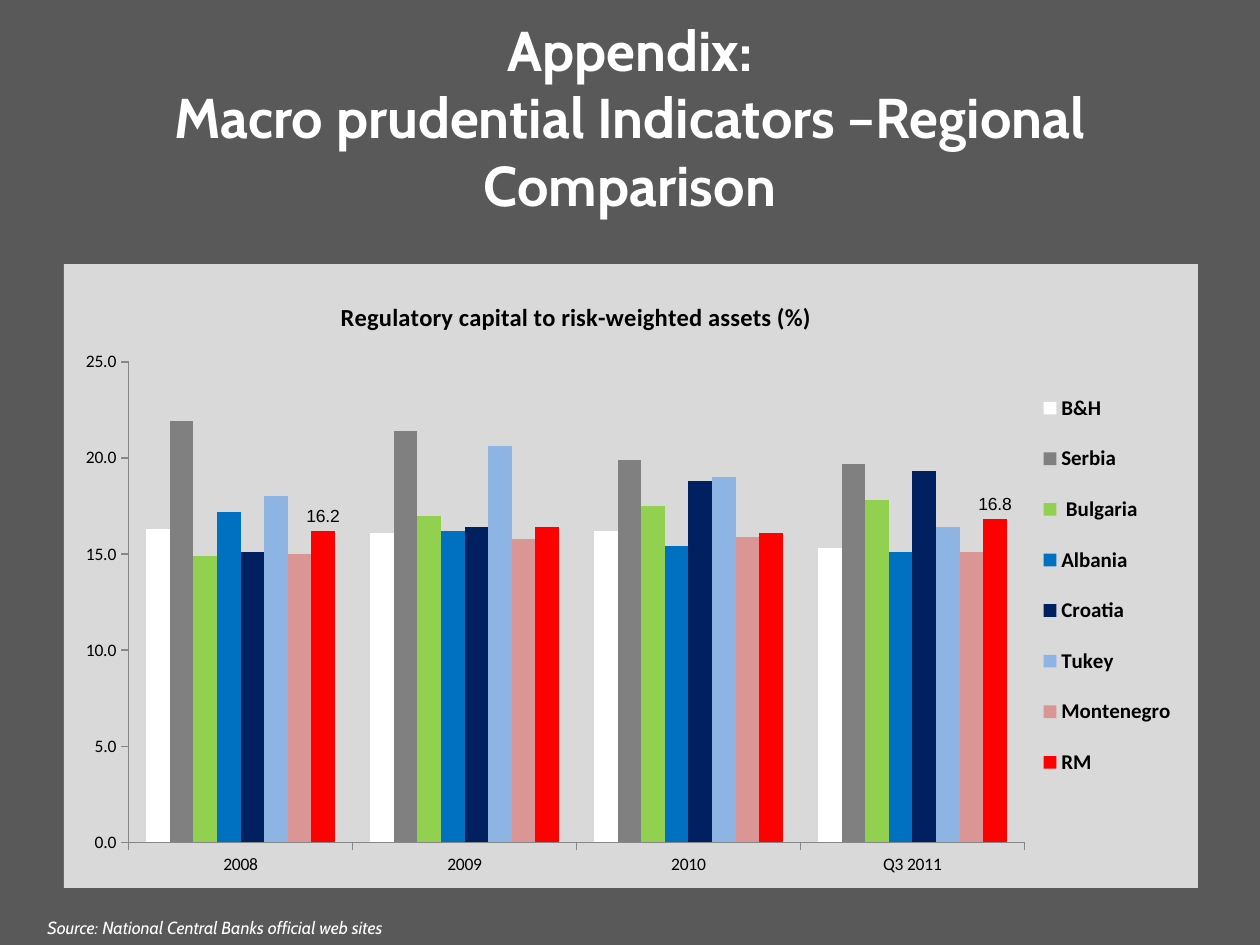
"""Build the appendix slide comparing regional capital adequacy."""
import lxml.etree
import pptx
import pptx.chart.data
import pptx.dml.color
import pptx.enum.chart
import pptx.enum.text
import pptx.oxml
import pptx.oxml.ns
import pptx.util

EMU_PER_PX = 914400 / 126
YEARS = ["2008", "2009", "2010", "Q3 2011"]
COUNTRIES = [
    ("B&H", "FFFFFF", [16.3, 16.1, 16.2, 15.3]),
    ("Serbia", "808080", [21.9, 21.4, 19.9, 19.7]),
    (" Bulgaria", "92D050", [14.9, 17, 17.5, 17.8]),
    ("Albania", "0070C0", [17.2, 16.2, 15.4, 15.1]),
    ("Croatia", "002060", [15.1, 16.4, 18.8, 19.3]),
    ("Tukey", "8EB4E3", [18, 20.6, 19, 16.4]),
    ("Montenegro", "D99694", [15, 15.8, 15.9, 15.1]),
    ("RM", "FF0000", [16.2, 16.4, 16.1, 16.8]),
]
LABELLED_YEARS = [0, 3]
PANEL = "D9D9D9"


def px(*lengths):
    """Turn pixel lengths into EMU."""
    return [pptx.util.Emu(round(length * EMU_PER_PX)) for length in lengths]


def colour(hex_code):
    """Return the colour for a hex string."""
    return pptx.dml.color.RGBColor.from_string(hex_code)


def style(font, size, hex_code, name, bold=False, italic=False):
    """Apply typeface, size, colour and emphasis to a font."""
    font.name = name
    font.size = pptx.util.Pt(size)
    font.color.rgb = colour(hex_code)
    font.bold = bold
    font.italic = italic


def add_heading(slide, text, box):
    """Move and format the title placeholder."""
    heading = slide.shapes.title
    heading.left, heading.top, heading.width, heading.height = px(*box)
    frame = heading.text_frame
    frame.text = text
    frame.word_wrap = True
    frame.auto_size = pptx.enum.text.MSO_AUTO_SIZE.NONE
    frame.vertical_anchor = pptx.enum.text.MSO_ANCHOR.MIDDLE
    frame.paragraphs[0].alignment = pptx.enum.text.PP_ALIGN.CENTER
    for run in frame.paragraphs[0].runs:
        style(run.font, 32, "FFFFFF", "Cabin", bold=True)


def add_source_note(slide, text, box):
    """Add the italic source line."""
    frame = slide.shapes.add_textbox(*px(*box)).text_frame
    frame.word_wrap = True
    frame.auto_size = pptx.enum.text.MSO_AUTO_SIZE.SHAPE_TO_FIT_TEXT
    frame.text = text
    style(frame.paragraphs[0].runs[0].font, 10, "FFFFFF", "Cabin", italic=True)


def panel_fill():
    """Return chart shape properties with the panel fill and no outline."""
    return pptx.oxml.parse_xml(
        f'<c:spPr {pptx.oxml.ns.nsdecls("c", "a")}><a:solidFill><a:srgbClr val="{PANEL}"/>'
        "</a:solidFill><a:ln><a:noFill/></a:ln></c:spPr>"
    )


def place(part, x, y, width=None, height=None, inner=False):
    """Give a chart part a manual layout in fractions of the chart."""
    for old in part.findall(pptx.oxml.ns.qn("c:layout")):
        part.remove(old)
    layout = lxml.etree.Element(pptx.oxml.ns.qn("c:layout"))
    manual = lxml.etree.SubElement(layout, pptx.oxml.ns.qn("c:manualLayout"))
    settings = [("layoutTarget", "inner" if inner else None), ("xMode", "edge"),
                ("yMode", "edge"), ("x", x), ("y", y), ("w", width), ("h", height)]
    for tag, value in settings:
        if value is not None:
            lxml.etree.SubElement(manual, pptx.oxml.ns.qn(f"c:{tag}")).set("val", str(value))
    overlay = part.find(pptx.oxml.ns.qn("c:overlay"))
    part.insert(0 if overlay is None else part.index(overlay), layout)


def format_axes(chart):
    """Set the scale, tick marks and lines of both axes."""
    for axis in (chart.category_axis, chart.value_axis):
        axis.has_major_gridlines = False
        axis.major_tick_mark = pptx.enum.chart.XL_TICK_MARK.OUTSIDE
        axis.format.line.color.rgb = colour("868686")
        axis.format.line.width = pptx.util.Pt(0.75)
    scale = chart.value_axis
    scale.minimum_scale, scale.maximum_scale, scale.major_unit = 0, 25, 5
    scale.tick_labels.number_format = "0.0"
    scale.tick_labels.number_format_is_linked = False


def format_bars(plot):
    """Colour the countries and label the chosen years of the last one."""
    plot.gap_width = 150
    plot.overlap = 0
    plot.vary_by_categories = False
    for bars, (_, hex_code, _) in zip(plot.series, COUNTRIES):
        bars.format.fill.solid()
        bars.format.fill.fore_color.rgb = colour(hex_code)
        bars.invert_if_negative = False
    highlighted = plot.series[-1]
    highlighted.data_labels.show_value = False
    for year in LABELLED_YEARS:
        label = highlighted.points[year].data_label
        style(label.font, 10, "000000", "Arial")
        label.position = pptx.enum.chart.XL_LABEL_POSITION.OUTSIDE_END


def add_capital_chart(slide, title, box):
    """Add the clustered column chart with its title and legend."""
    data = pptx.chart.data.CategoryChartData(number_format="0.0")
    data.categories = YEARS
    for country, _, ratios in COUNTRIES:
        data.add_series(country, ratios)
    kind = pptx.enum.chart.XL_CHART_TYPE.COLUMN_CLUSTERED
    chart = slide.shapes.add_chart(kind, *px(*box), data).chart
    style(chart.font, 10, "000000", "Calibri")

    chart.has_title = True
    heading = chart.chart_title.text_frame
    heading.text = title
    style(heading.paragraphs[0].runs[0].font, 14, "000000", "Calibri", bold=True)
    place(chart.chart_title._element, 0.24, 0.05)

    chart.has_legend = True
    chart.legend.position = pptx.enum.chart.XL_LEGEND_POSITION.RIGHT
    chart.legend.include_in_layout = False
    style(chart.legend.font, 12, "000000", "Calibri", bold=True)
    place(chart.legend._element, 0.85, 0.17, 0.14, 0.69)

    format_axes(chart)
    format_bars(chart.plots[0])
    space = chart._chartSpace
    space.chart.addnext(panel_fill())
    plot_area = space.chart.plotArea
    place(plot_area, 0.057, 0.157, 0.79, 0.77, inner=True)
    plot_area.append(panel_fill())


def main():
    """Build and save the slide."""
    deck = pptx.Presentation()
    deck.slide_width, deck.slide_height = px(1260, 945)
    slide = deck.slides.add_slide(deck.slide_layouts[5])
    slide.background.fill.solid()
    slide.background.fill.fore_color.rgb = colour("595959")
    add_heading(slide, "Appendix:\vMacro prudential Indicators –Regional Comparison",
                (63, 38, 1134, 157))
    add_capital_chart(slide, "Regulatory capital to risk-weighted assets (%)",
                      (64, 264, 1134, 624))
    add_source_note(slide, "Source: National Central Banks official web sites",
                    (35, 911, 456, 34))
    deck.save("out.pptx")


if __name__ == "__main__":
    main()
